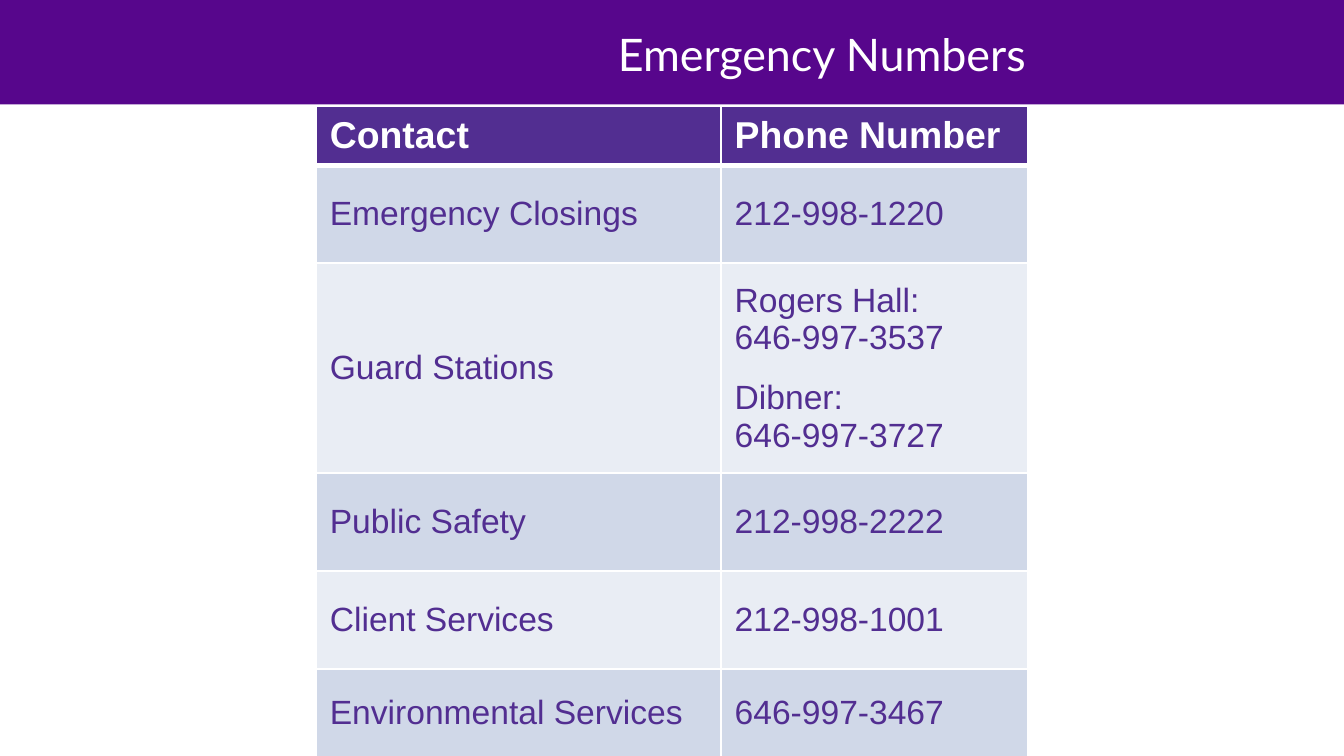
from lxml import etree
from pptx import Presentation
from pptx.dml.color import RGBColor
from pptx.enum.shapes import MSO_SHAPE
from pptx.enum.text import MSO_ANCHOR, PP_ALIGN
from pptx.oxml import parse_xml
from pptx.oxml.ns import nsdecls
from pptx.util import Pt

WHITE = RGBColor(0xFF, 0xFF, 0xFF)
PURPLE = RGBColor(0x57, 0x06, 0x8C)
VIOLET = RGBColor(0x52, 0x2E, 0x91)
BANDS = [RGBColor(0xE9, 0xED, 0xF4), RGBColor(0xD0, 0xD8, 0xE8)]

ROWS = [
    ("Contact", "Phone Number"),
    ("Emergency Closings", "212-998-1220"),
    ("Guard Stations", "Rogers Hall:\n646-997-3537\nDibner:\n646-997-3727"),
    ("Public Safety", "212-998-2222"),
    ("Client Services", "212-998-1001"),
    ("Environmental Services", "646-997-3467"),
]
COL_WIDTHS = [216.9, 164.4]
ROW_HEIGHTS = [31.5, 52.5, 112.3, 52.5, 52.5, 47]


def set_borders(cell, top, bottom):
    """Give a cell white borders; widths in points."""
    tcPr = cell._tc.get_or_add_tcPr()
    for i, (side, width) in enumerate(zip("LRTB", (1, 1, top, bottom))):
        tcPr.insert(i, parse_xml(
            f'<a:ln{side} {nsdecls("a")} w="{Pt(width)}"><a:solidFill>'
            f'<a:srgbClr val="{WHITE}"/></a:solidFill></a:ln{side}>'))


prs = Presentation()
prs.slide_width, prs.slide_height = Pt(720), Pt(405)
s = prs.slides.add_slide(prs.slide_layouts[5])

# Header bar, behind the title
bar = s.shapes.add_shape(MSO_SHAPE.RECTANGLE, 0, 0, Pt(720), Pt(56))
bar.shadow.inherit = False
bar.fill.solid()
bar.fill.fore_color.rgb = PURPLE
bar.line.fill.background()
s.shapes._spTree.insert(2, bar._element)

# Title
title = s.shapes.title
title.left, title.top, title.width, title.height = Pt(178.5), Pt(18), Pt(523.5), Pt(21)
tf = title.text_frame
tf.margin_left = tf.margin_right = tf.margin_top = tf.margin_bottom = 0
tf.vertical_anchor = MSO_ANCHOR.MIDDLE
tf.text = "Emergency Numbers"
p = tf.paragraphs[0]
p.alignment = PP_ALIGN.CENTER
p.font.name, p.font.size, p.font.color.rgb = "Lato", Pt(24), WHITE

# Table of contacts
table = s.shapes.add_table(len(ROWS), 2, Pt(169.5), Pt(57), Pt(sum(COL_WIDTHS)),
                           Pt(sum(ROW_HEIGHTS))).table
for col, width in zip(table.columns, COL_WIDTHS):
    col.width = Pt(width)
for i, (texts, height) in enumerate(zip(ROWS, ROW_HEIGHTS)):
    header = i == 0
    table.rows[i].height = Pt(height)
    for j, text in enumerate(texts):
        cell = table.cell(i, j)
        cell.text = text
        cell.vertical_anchor = MSO_ANCHOR.MIDDLE
        cell.fill.solid()
        cell.fill.fore_color.rgb = VIOLET if header else BANDS[i % 2]
        set_borders(cell, 3 if i == 1 else 1, 3 if header else 1)
        for p in cell.text_frame.paragraphs:
            if p.text == "Dibner:":
                p.space_before = Pt(12)
            p.font.name, p.font.bold = "Arial", header
            p.font.size = Pt(20 if header else 18)
            p.font.color.rgb = WHITE if header else VIOLET

prs.save("out.pptx")
